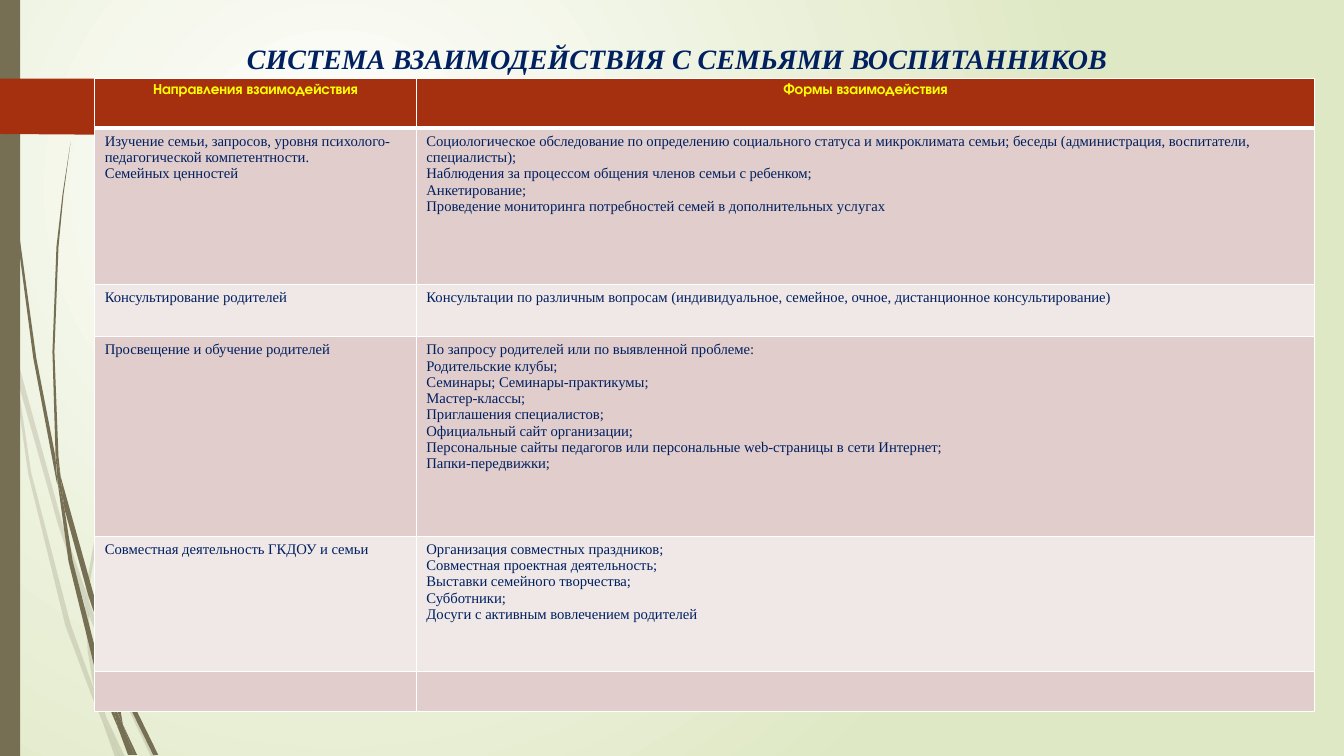
import pptx
import pptx.util
import pptx.dml.color
import pptx.enum.shapes
import pptx.enum.text
import pptx.oxml.ns
from lxml import etree

Inches = pptx.util.Inches
Pt = pptx.util.Pt
qn = pptx.oxml.ns.qn

COLORS = {"olive": "766F54", "rust": "A53010", "navy": "002060", "yellow": "FFFF00",
          "white": "FFFFFF", "green": "DFE8C4", "dark_band": "E1CDCC", "light_band": "F0E8E7"}

TITLE = "СИСТЕМА ВЗАИМОДЕЙСТВИЯ С СЕМЬЯМИ ВОСПИТАННИКОВ"
HEADERS = [["Направления взаимодействия"], ["Формы взаимодействия"]]
DIRECTIONS = [
    (["Изучение семьи, запросов, уровня психолого-педагогической компетентности.",
      "Семейных ценностей"],
     ["Социологическое обследование по определению социального статуса и микроклимата семьи; "
      "беседы (администрация, воспитатели, специалисты);",
      "Наблюдения за процессом общения членов семьи с ребенком;",
      "Анкетирование;",
      "Проведение мониторинга потребностей семей в дополнительных услугах"]),
    (["Консультирование родителей"],
     ["Консультации по различным вопросам (индивидуальное, семейное, очное, "
      "дистанционное консультирование)"]),
    (["Просвещение и обучение родителей"],
     ["По запросу родителей или по выявленной проблеме:",
      "Родительские клубы;",
      "Семинары; Семинары-практикумы;",
      "Мастер-классы;",
      "Приглашения специалистов;",
      "Официальный сайт организации;",
      "Персональные сайты педагогов или персональные web-страницы в сети Интернет;",
      "Папки-передвижки;"]),
    (["Совместная деятельность ГКДОУ и семьи"],
     ["Организация совместных праздников;",
      "Совместная проектная деятельность;",
      "Выставки семейного творчества;",
      "Субботники;",
      "Досуги с активным вовлечением родителей"]),
    ([], []),
]
COLUMN_WIDTHS = [3.19, 8.91]
ROW_HEIGHTS = [0.49, 1.55, 0.52, 1.98, 1.34, 0.38]

TITLE_FONT = {"size": Pt(20), "name": "Times New Roman", "bold": True, "italic": True}
HEADER_FONT = {"size": Pt(10.5), "name": "TeX Gyre Adventor", "bold": True}
BODY_FONT = {"size": Pt(10.5), "name": "Times New Roman", "bold": False}

PALE_WISPS = [
    [(0.11, 3.5), (0.09, 3.22), (0, 2.82), (0, 2.99), (0.1, 3.44)],
    [(0.58, 5.22), (0.84, 5.99), (0.85, 5.86), (0.62, 5.2), (0.14, 3.45), (0.17, 3.76)],
    [(0.92, 6.07), (0.88, 5.96), (0.88, 6.1), (1.23, 6.94), (1.5, 7.51), (1.55, 7.51), (1.27, 6.92)],
    [(1.19, 7.51), (1.24, 7.51), (1.05, 7.11)],
    [(0.93, 6.83), (0.7, 6.19), (0.31, 4.69), (0.17, 3.76), (0.11, 3.5), (0.28, 4.7),
     (0.65, 6.21), (0.92, 6.93), (1.01, 7.14), (0.99, 7.07)],
    [(0.84, 5.99), (0.87, 6.46), (0.93, 6.83), (0.96, 6.92), (1.05, 7.11), (0.91, 6.46), (0.88, 6.08)],
    [(0.88, 5.84), (1.1, 4.62), (1.6, 3.49), (2.29, 2.45), (2.68, 1.98), (3.12, 1.54), (3.12, 1.53),
     (2.68, 1.97), (2.28, 2.44), (1.58, 3.48), (1.07, 4.61), (0.85, 5.84), (0.88, 5.96)],
    [(1.01, 7.14), (1.14, 7.51), (1.19, 7.51)],
    [(0.88, 6.08), (0.88, 5.96), (0.85, 5.86), (0.84, 5.99)],
    [(0.96, 6.92), (0.93, 6.83), (0.99, 7.07), (1.01, 7.14), (1.19, 7.51), (1.05, 7.11)],
]
DARK_WISPS = [
    [(0.07, 1.1), (0.17, 2.33), (0.33, 3.55), (0.56, 4.77), (0.57, 4.81), (0.55, 4.53),
     (0.36, 3.55), (0.19, 2.32), (0.08, 1.09), (0.04, 0), (0.03, 0)],
    [(0.88, 5.92), (1.06, 6.45), (1.06, 6.31), (0.93, 5.9), (0.6, 4.72), (0.64, 5.05)],
    [(1.13, 6.49), (1.1, 6.41), (1.11, 6.56), (1.32, 7.08), (1.52, 7.49), (1.57, 7.49), (1.36, 7.06)],
    [(1.1, 6.91), (0.98, 6.57), (0.72, 5.56), (0.64, 5.05), (0.57, 4.77), (0.68, 5.57),
     (0.93, 6.59), (1.11, 7.08), (1.17, 7.22)],
    [(0.6, 4.72), (0.58, 4.53), (0.54, 3.49), (0.58, 2.45), (0.63, 1.93), (0.7, 1.41),
     (0.62, 1.93), (0.56, 2.45), (0.52, 3.49), (0.55, 4.49)],
    [(1.33, 7.49), (1.36, 7.49), (1.22, 7.19)],
    [(0.57, 4.77), (0.64, 5.05), (0.6, 4.72), (0.55, 4.49)],
    [(1.11, 6.33), (1.25, 5.52), (1.58, 4.76), (2.05, 4.06), (2.61, 3.44), (2.6, 3.44),
     (2.04, 4.05), (1.56, 4.74), (1.22, 5.51), (1.06, 6.31), (1.1, 6.41)],
    [(1.17, 7.22), (1.27, 7.49), (1.31, 7.49)],
    [(1.06, 6.45), (1.1, 6.91), (1.22, 7.19), (1.11, 6.56)],
    [(1.06, 6.45), (1.11, 6.56), (1.1, 6.41), (1.06, 6.31)],
    [(1.16, 7.06), (1.1, 6.91), (1.17, 7.22), (1.3, 7.49), (1.33, 7.49), (1.22, 7.19)],
]
ARROW = [(0, 0.78), (1.46, 0.78), (1.48, 0.79), (1.73, 1.04), (1.74, 1.06),
         (1.73, 1.08), (1.48, 1.33), (1.46, 1.34), (0, 1.33)]


def rgb(color):
    return pptx.dml.color.RGBColor.from_string(COLORS[color])


def paint(shape, color, opacity=100):
    shape.shadow.inherit = False
    shape.fill.solid()
    shape.fill.fore_color.rgb = rgb(color)
    shape.line.fill.background()
    if opacity < 100:
        for tint in shape._element.spPr.iter(qn("a:srgbClr")):
            etree.SubElement(tint, qn("a:alpha"), val=str(opacity * 1000))


def add_outline(shapes, points, color, opacity=100):
    corners = [(Inches(x), Inches(y)) for x, y in points]
    builder = shapes.build_freeform(*corners[0], scale=1.0)
    builder.add_line_segments(corners[1:], close=True)
    paint(builder.convert_to_shape(), color, opacity)


def write(text_frame, lines, font, color, alignment):
    for index, line in enumerate(lines):
        paragraph = text_frame.add_paragraph() if index else text_frame.paragraphs[0]
        paragraph.alignment = alignment
        run = paragraph.add_run()
        run.text = line
        for name, value in font.items():
            setattr(run.font, name, value)
        run.font.color.rgb = rgb(color)


def add_borders(cell, widths):
    properties = cell._tc.get_or_add_tcPr()
    for side, width in widths.items():
        border = etree.SubElement(properties, qn("a:ln" + side), w=str(Pt(width)))
        fill = etree.SubElement(border, qn("a:solidFill"))
        etree.SubElement(fill, qn("a:srgbClr"), val=COLORS["white"])


def add_background(slide):
    fill = slide.background.fill
    fill.gradient()
    for stop, color in zip(fill.gradient_stops, ("white", "green")):
        stop.color.rgb = rgb(color)
    gradient = next(slide._element.iter(qn("a:gradFill")))
    gradient.remove(gradient.find(qn("a:lin")))
    circle = etree.SubElement(gradient, qn("a:path"), {"path": "circle"})
    etree.SubElement(circle, qn("a:fillToRect"), l="50000", t="50000", r="100000", b="100000")


def add_directions_table(slide):
    align = pptx.enum.text.PP_ALIGN
    rows = [HEADERS] + DIRECTIONS
    table = slide.shapes.add_table(len(rows), len(COLUMN_WIDTHS), Inches(0.94), Inches(0.78),
                                   Inches(sum(COLUMN_WIDTHS)), Inches(sum(ROW_HEIGHTS))).table
    for column, width in zip(table.columns, COLUMN_WIDTHS):
        column.width = Inches(width)
    for index, (texts, height) in enumerate(zip(rows, ROW_HEIGHTS)):
        table.rows[index].height = Inches(height)
        band = "rust" if index == 0 else "dark_band" if index % 2 else "light_band"
        style = (HEADER_FONT, "yellow", align.CENTER) if index == 0 else (BODY_FONT, "navy", align.LEFT)
        for cell, lines in zip(table.rows[index].cells, texts):
            add_borders(cell, {"L": 1, "R": 1, "T": 3 if index == 1 else 1, "B": 1 if index else 3})
            cell.fill.solid()
            cell.fill.fore_color.rgb = rgb(band)
            write(cell.text_frame, lines, *style)


def main():
    presentation = pptx.Presentation()
    presentation.slide_width, presentation.slide_height = Inches(13.33), Inches(7.5)
    slide = presentation.slides.add_slide(presentation.slide_layouts[6])
    add_background(slide)
    for wisps, opacity in ((PALE_WISPS, 20), (DARK_WISPS, 100)):
        group = slide.shapes.add_group_shape()
        for wisp in wisps:
            add_outline(group.shapes, wisp, "olive", opacity)
    side_bar = slide.shapes.add_shape(pptx.enum.shapes.MSO_SHAPE.RECTANGLE, 0, 0, Inches(0.2), Inches(7.5))
    paint(side_bar, "olive")
    add_outline(slide.shapes, ARROW, "rust")
    title = slide.shapes.add_textbox(Inches(2.35), Inches(0.15), Inches(10.58), Inches(0.64)).text_frame
    title.word_wrap = True
    title.vertical_anchor = pptx.enum.text.MSO_ANCHOR.BOTTOM
    write(title, [TITLE], TITLE_FONT, "navy", pptx.enum.text.PP_ALIGN.LEFT)
    add_directions_table(slide)
    presentation.save("out.pptx")


if __name__ == "__main__":
    main()
